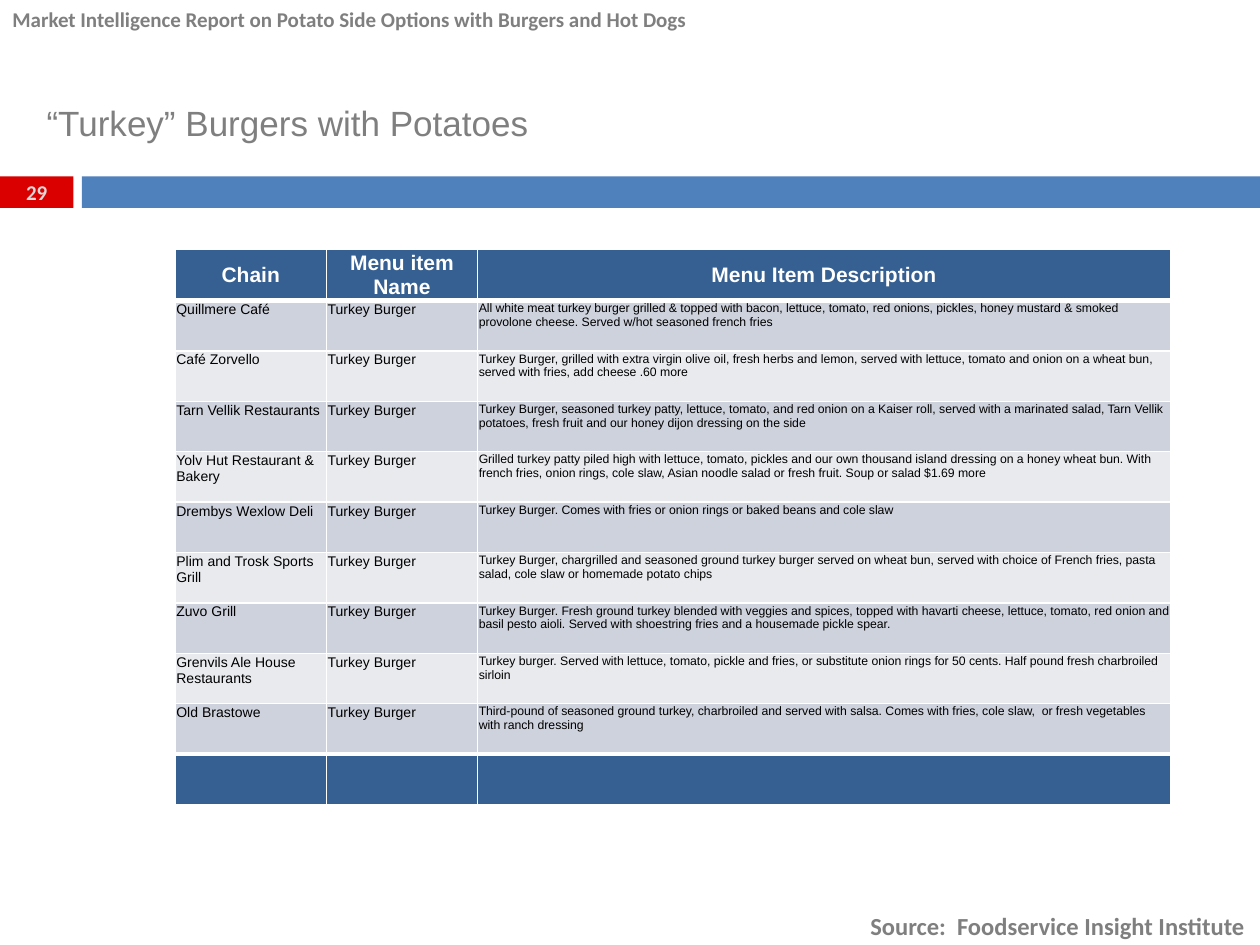
from lxml.etree import SubElement
from pptx import Presentation
from pptx.dml.color import RGBColor
from pptx.enum.shapes import MSO_SHAPE
from pptx.enum.text import MSO_ANCHOR, MSO_AUTO_SIZE, PP_ALIGN
from pptx.oxml.ns import qn
from pptx.util import Pt

COLORS = {
    "red": "DA0000",
    "blue": "4F81BD",
    "navy": "366092",
    "band_dark": "CED2DC",
    "band_light": "E8EAEE",
    "gray": "7F7F7F",
    "pale": "D9D9D9",
    "white": "FFFFFF",
    "black": "000000",
}

HEADINGS = ("Chain", "Menu item Name", "Menu Item Description")
ITEM_NAME = "Turkey Burger"
BURGERS = [
    ("Quillmere Café", "All white meat turkey burger grilled & topped with bacon, lettuce, tomato, red onions, pickles, honey mustard & smoked provolone cheese. Served w/hot seasoned french fries"),
    ("Café Zorvello", "Turkey Burger, grilled with extra virgin olive oil, fresh herbs and lemon, served with lettuce, tomato and onion on a wheat bun, served with fries, add cheese .60 more"),
    ("Tarn Vellik Restaurants", "Turkey Burger, seasoned turkey patty, lettuce, tomato, and red onion on a Kaiser roll, served with a marinated salad, Tarn Vellik potatoes, fresh fruit and our honey dijon dressing on the side"),
    ("Yolv Hut Restaurant & Bakery", "Grilled turkey patty piled high with lettuce, tomato, pickles and our own thousand island dressing on a honey wheat bun. With french fries, onion rings, cole slaw, Asian noodle salad or fresh fruit. Soup or salad $1.69 more"),
    ("Drembys Wexlow Deli", "Turkey Burger. Comes with fries or onion rings or baked beans and cole slaw"),
    ("Plim and Trosk Sports Grill", "Turkey Burger, chargrilled and seasoned ground turkey burger served on wheat bun, served with choice of French fries, pasta salad, cole slaw or homemade potato chips"),
    ("Zuvo Grill", "Turkey Burger. Fresh ground turkey blended with veggies and spices, topped with havarti cheese, lettuce, tomato, red onion and basil pesto aioli. Served with shoestring fries and a housemade pickle spear."),
    ("Grenvils Ale House Restaurants", "Turkey burger. Served with lettuce, tomato, pickle and fries, or substitute onion rings for 50 cents. Half pound fresh charbroiled sirloin"),
    ("Old Brastowe", "Third-pound of seasoned ground turkey, charbroiled and served with salsa. Comes with fries, cole slaw,  or fresh vegetables with ranch dressing"),
]


def rgb(color):
    return RGBColor.from_string(COLORS[color])


def write(paragraph, words, size, color, font="Arial", bold=False, align=PP_ALIGN.LEFT):
    paragraph.alignment = align
    run = paragraph.add_run()
    run.text = words
    run.font.name = font
    run.font.size = Pt(size)
    run.font.bold = bold
    run.font.color.rgb = rgb(color)


def add_bar(slide, box, color):
    bar = slide.shapes.add_shape(MSO_SHAPE.RECTANGLE, *map(Pt, box))
    bar.shadow.inherit = False
    bar.fill.solid()
    bar.fill.fore_color.rgb = rgb(color)
    bar.line.fill.background()
    return bar


def add_divider(slide, box, number):
    left, top, width, height = box
    number_width, gap = 42, 4.8
    number_box = add_bar(slide, (left, top, number_width, height), "red")
    frame = number_box.text_frame
    frame.vertical_anchor = MSO_ANCHOR.MIDDLE
    frame.margin_top = frame.margin_bottom = 0
    write(frame.paragraphs[0], number, 12, "pale", "Calibri", True, PP_ALIGN.CENTER)
    bar_left = number_width + gap
    add_bar(slide, (left + bar_left, top, width - bar_left, height), "blue")


def add_caption(slide, box, words, size, align):
    frame = slide.shapes.add_textbox(*map(Pt, box)).text_frame
    frame.word_wrap = True
    frame.auto_size = MSO_AUTO_SIZE.SHAPE_TO_FIT_TEXT
    write(frame.paragraphs[0], words, size, "gray", "Calibri", True, align)


def place_title(slide, box, words):
    title = slide.shapes.title
    title.left, title.top, title.width, title.height = map(Pt, box)
    frame = title.text_frame
    frame.word_wrap = True
    frame.auto_size = MSO_AUTO_SIZE.NONE
    frame.vertical_anchor = MSO_ANCHOR.BOTTOM
    frame.paragraphs[0].line_spacing = 0.65
    write(frame.paragraphs[0], words, 20, "gray")


def style_cell(cell, color, top_border, bottom_border):
    cell.margin_left = cell.margin_right = cell.margin_top = Pt(0.7)
    cell.margin_bottom = 0
    properties = cell._tc.get_or_add_tcPr()
    for side, width in zip("LRTB", (1, 1, top_border, bottom_border)):
        border = SubElement(properties, qn(f"a:ln{side}"), w=str(Pt(width)))
        fill = SubElement(border, qn("a:solidFill"))
        SubElement(fill, qn("a:srgbClr"), val=COLORS["white"])
    cell.fill.solid()
    cell.fill.fore_color.rgb = rgb(color)


def add_burger_table(slide, box):
    row_count = len(BURGERS) + 2
    last = row_count - 1
    table = slide.shapes.add_table(row_count, len(HEADINGS), *map(Pt, box)).table
    table.horz_banding = False
    for column, width in zip(table.columns, (86.4, 86.4, box[2] - 172.8)):
        column.width = Pt(width)
    for row in table.rows:
        row.height = Pt(box[3] / row_count)

    for index, row in enumerate(table.rows):
        if index in (0, last):
            color = "navy"
        else:
            color = "band_dark" if index % 2 else "band_light"
        top_border = 3 if index in (1, last) else 1
        bottom_border = 3 if index in (0, last - 1) else 1
        for cell in row.cells:
            style_cell(cell, color, top_border, bottom_border)

    for column, heading in enumerate(HEADINGS):
        cell = table.cell(0, column)
        cell.vertical_anchor = MSO_ANCHOR.MIDDLE
        write(cell.text_frame.paragraphs[0], heading, 12, "white", bold=True, align=PP_ALIGN.CENTER)
    for index, (chain, description) in enumerate(BURGERS, 1):
        for column, (words, size) in enumerate(((chain, 8), (ITEM_NAME, 8), (description, 7))):
            write(table.cell(index, column).text_frame.paragraphs[0], words, size, "black")


def main():
    presentation = Presentation()
    presentation.slide_width, presentation.slide_height = Pt(720), Pt(540)
    slide = presentation.slides.add_slide(presentation.slide_layouts[5])
    add_divider(slide, (0, 100.8, 720, 18), "29")
    add_caption(slide, (375.8, 517, 342.7, 24.5), "Source:  Foodservice Insight Institute", 14, PP_ALIGN.RIGHT)
    add_caption(slide, (0, 0, 437.8, 21.6), "Market Intelligence Report on Potato Side Options with Burgers and Hot Dogs", 12, PP_ALIGN.LEFT)
    place_title(slide, (19.4, 46.1, 680.4, 38.9), "“Turkey” Burgers with Potatoes")
    add_burger_table(slide, (100.1, 142.2, 568.8, 316.8))
    presentation.save("out.pptx")


if __name__ == "__main__":
    main()
